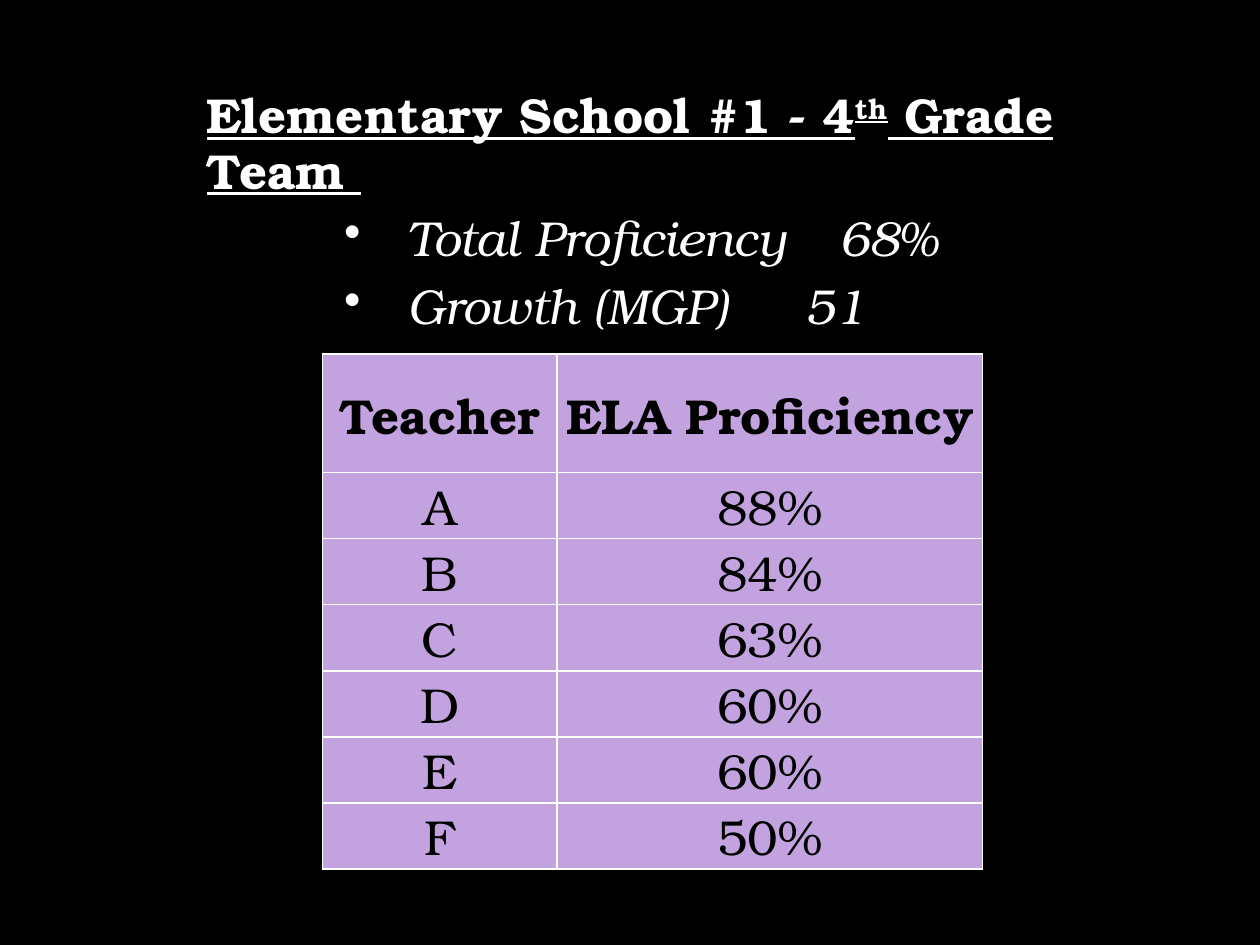
from dataclasses import dataclass

from lxml.etree import SubElement
from pptx import Presentation
from pptx.dml.color import RGBColor
from pptx.enum.text import MSO_ANCHOR, PP_ALIGN
from pptx.oxml.ns import qn
from pptx.util import Inches, Pt


@dataclass(frozen=True)
class Theme:
    font: str = "TeX Gyre Bonum"
    size: int = 28
    background: str = "000000"
    light: str = "FFFFFF"
    dark: str = "000000"
    cell: str = "C2A3DF"
    border: int = 1


@dataclass(frozen=True)
class Measure:
    label: str
    value: str
    tab: float


@dataclass(frozen=True)
class Score:
    teacher: str
    proficiency: str


THEME = Theme()
HEADING = [("Elementary School #1 - 4", False), ("th", True), (" Grade Team ", False)]
MEASURES = [
    Measure("Total Proficiency", "68%", 5.02),
    Measure("Growth (MGP)", "51", 4.75),
]
SCORES = [
    Score("Teacher", "ELA Proficiency"),
    Score("A", "88%"),
    Score("B", "84%"),
    Score("C", "63%"),
    Score("D", "60%"),
    Score("E", "60%"),
    Score("F", "50%"),
]


def set_all(obj, values: dict) -> None:
    for name, value in values.items():
        setattr(obj, name, value)


def add_run(p, text: str, color: str, **style):
    r = p.add_run()
    r.text = text
    set_all(r.font, {"name": THEME.font, "size": Pt(THEME.size), **style})
    r.font.color.rgb = RGBColor.from_string(color)
    return r


def space_paragraph(p, before: int) -> None:
    set_all(p, {"line_spacing": 0.94, "space_before": Pt(before), "space_after": Pt(2)})


def add_measure(tf, measure: Measure) -> None:
    p = tf.add_paragraph()
    p.level = 1
    space_paragraph(p, 5)
    # Hanging bullet and the tab stop for the value
    pPr = p._p.get_or_add_pPr()
    pPr.set("marL", str(Inches(1.59)))
    pPr.set("indent", str(Inches(-0.5)))
    SubElement(pPr, qn("a:buChar"), char="•")
    tabs = SubElement(pPr, qn("a:tabLst"))
    SubElement(tabs, qn("a:tab"), pos=str(Inches(measure.tab)), algn="l")
    add_run(p, f"{measure.label} \t{measure.value}", THEME.light, italic=True)


def add_summary(s) -> None:
    tf = s.shapes.add_textbox(Inches(1.57), Inches(0.41), Inches(7.61), Inches(5.59)).text_frame
    set_all(tf, {
        "word_wrap": True,
        "margin_left": Inches(0.07),
        "margin_right": Inches(0.07),
        "margin_top": Inches(0.3),
        "margin_bottom": Inches(0.04),
    })
    p = tf.paragraphs[0]
    space_paragraph(p, 10)
    for text, raised in HEADING:
        r = add_run(p, text, THEME.light, bold=True, underline=True)
        if raised:
            r.font._element.set("baseline", "30000")
    for measure in MEASURES:
        add_measure(tf, measure)


def add_borders(cell) -> None:
    tcPr = cell._tc.get_or_add_tcPr()
    for index, side in enumerate(("lnL", "lnR", "lnT", "lnB")):
        ln = tcPr.makeelement(qn(f"a:{side}"), {"w": str(Pt(THEME.border))})
        fill = SubElement(ln, qn("a:solidFill"))
        SubElement(fill, qn("a:srgbClr"), val=THEME.light)
        tcPr.insert(index, ln)


def fill_cell(cell, text: str, bold: bool) -> None:
    set_all(cell, {
        "vertical_anchor": MSO_ANCHOR.MIDDLE,
        "margin_left": 0,
        "margin_right": 0,
        "margin_top": 0,
        "margin_bottom": 0,
    })
    cell.fill.solid()
    cell.fill.fore_color.rgb = RGBColor.from_string(THEME.cell)
    p = cell.text_frame.paragraphs[0]
    p.alignment = PP_ALIGN.CENTER
    add_run(p, text, THEME.dark, bold=bold)
    add_borders(cell)


def add_scores(s) -> None:
    height, header = Inches(4.09), Inches(0.94)
    table = s.shapes.add_table(
        len(SCORES), 2, Inches(2.56), Inches(2.81), Inches(5.24), height
    ).table
    for column, width in zip(table.columns, (1.86, 3.38)):
        column.width = Inches(width)
    body = (height - header) // (len(SCORES) - 1)
    for i, score in enumerate(SCORES):
        table.rows[i].height = body if i else header
        for j, text in enumerate((score.teacher, score.proficiency)):
            fill_cell(table.cell(i, j), text, bold=i == 0)


def main() -> None:
    prs = Presentation()
    set_all(prs, {"slide_width": Inches(10), "slide_height": Inches(7.5)})
    s = prs.slides.add_slide(prs.slide_layouts[6])
    s.background.fill.solid()
    s.background.fill.fore_color.rgb = RGBColor.from_string(THEME.background)
    add_summary(s)
    add_scores(s)
    prs.save("out.pptx")


if __name__ == "__main__":
    main()
